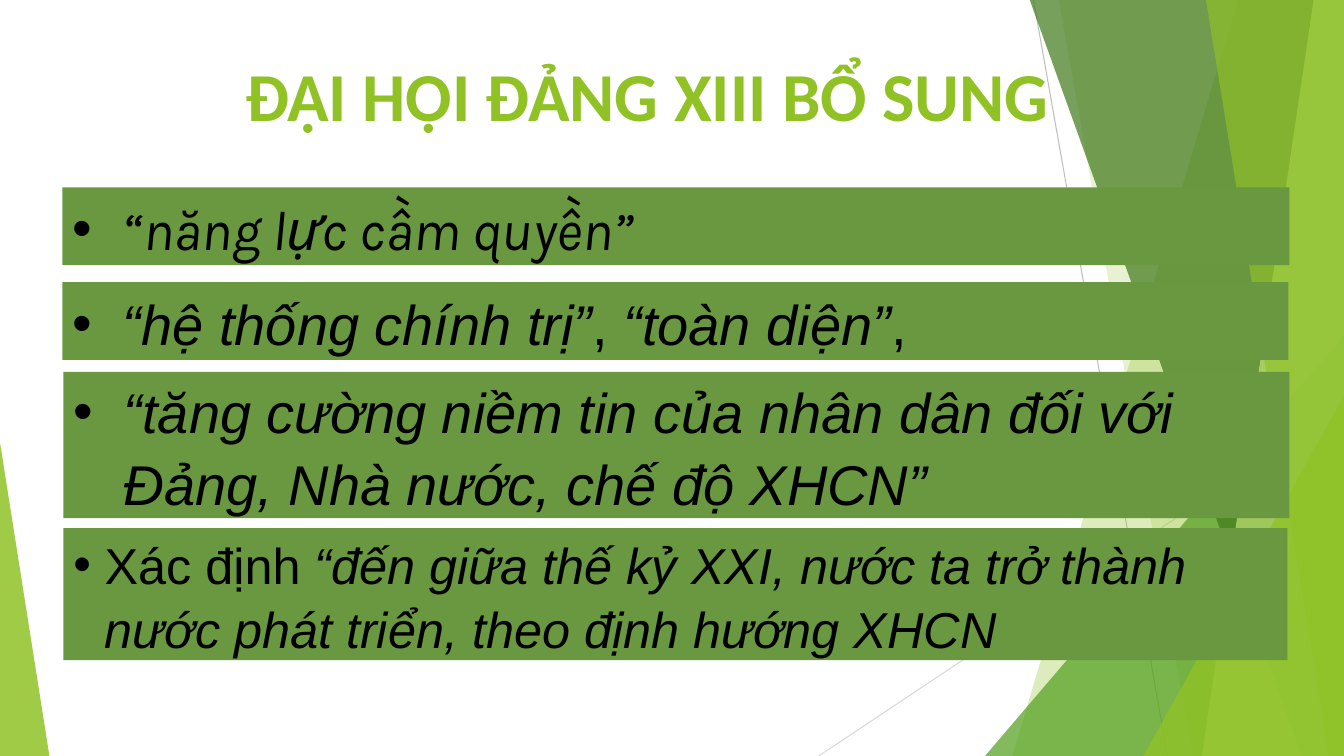
from dataclasses import dataclass

from lxml.etree import SubElement
from pptx import Presentation
from pptx.dml.color import RGBColor
from pptx.enum.shapes import MSO_CONNECTOR, MSO_SHAPE
from pptx.enum.text import MSO_ANCHOR, PP_ALIGN
from pptx.oxml.ns import qn
from pptx.util import Inches, Pt

WIDTH, HEIGHT = 13.33, 7.5


@dataclass(frozen=True)
class Theme:
    lime: str = "90C226"
    pale: str = "C0E474"
    leaf: str = "54A021"
    forest: str = "3F7819"
    bar: str = "699841"
    ink: str = "000000"
    grey: str = "BFBFBF"
    light_grey: str = "D9D9D9"
    title_size: int = 49
    large: int = 40
    medium: int = 36
    title_font: str = "Calibri"
    body_font: str = "Arial"
    quote_font: str = "Karla"


def add_text(para, text, *, size, font, color, bold=False, italic=False):
    """Append one formatted span to a paragraph."""
    span = para.add_run()
    span.text = text
    span.font.size = Pt(size)
    span.font.name = font
    span.font.bold = bold
    span.font.italic = italic
    span.font.color.rgb = RGBColor.from_string(color)


def add_bullet(para, indent):
    """Give a paragraph a round bullet with a hanging indent."""
    properties = para._p.get_or_add_pPr()
    properties.set("marL", str(Inches(indent)))
    properties.set("indent", str(-Inches(indent)))
    SubElement(properties, qn("a:buFont")).set("typeface", "Arial")
    SubElement(properties, qn("a:buChar")).set("char", "•")


class SlideBuilder:
    def __init__(self, deck, theme):
        self.theme = theme
        self.page = deck.slides.add_slide(deck.slide_layouts[6])

    def paint(self, shape, color, opacity=100):
        shape.shadow.inherit = False
        shape.line.fill.background()
        shape.fill.solid()
        shape.fill.fore_color.rgb = RGBColor.from_string(color)
        if opacity < 100:
            tint = shape.fill._xPr.find(qn("a:solidFill"))[0]
            SubElement(tint, qn("a:alpha")).set("val", str(opacity * 1000))

    def line(self, start, end, color):
        points = [Inches(value) for value in (*start, *end)]
        connector = self.page.shapes.add_connector(MSO_CONNECTOR.STRAIGHT, *points)
        connector.line.color.rgb = RGBColor.from_string(color)
        connector.line.width = Pt(0.75)
        SubElement(connector._element.spPr, qn("a:effectLst"))

    def panel(self, top_left, bottom_left, color, opacity):
        """Full-height panel with a slanted left edge."""
        corners = [(top_left, -0.01), (WIDTH, -0.01), (WIDTH, HEIGHT), (bottom_left, HEIGHT)]
        points = [(Inches(x), Inches(y)) for x, y in corners]
        builder = self.page.shapes.build_freeform(*points[0], scale=1.0)
        builder.add_line_segments(points[1:], close=True)
        self.paint(builder.convert_to_shape(), color, opacity)

    def triangle(self, left, top, width, apex, color, opacity):
        """Triangle that stands on the bottom edge of the slide."""
        shape = self.page.shapes.add_shape(
            MSO_SHAPE.ISOSCELES_TRIANGLE,
            Inches(left), Inches(top), Inches(width), Inches(HEIGHT - top))
        shape.adjustments[0] = apex
        self.paint(shape, color, opacity)

    def title(self, left, top, width, height, text):
        box = self.page.shapes.add_textbox(
            Inches(left), Inches(top), Inches(width), Inches(height))
        box.text_frame.word_wrap = True
        para = box.text_frame.paragraphs[0]
        para.alignment = PP_ALIGN.CENTER
        add_text(para, text, size=self.theme.title_size, font=self.theme.title_font,
                 color=self.theme.lime, bold=True)

    def bar(self, left, top, width, height, spans, *, size, font, indent, align):
        """Green bar with one bulleted paragraph of (text, italic) spans."""
        box = self.page.shapes.add_shape(
            MSO_SHAPE.RECTANGLE,
            Inches(left), Inches(top), Inches(width), Inches(height))
        self.paint(box, self.theme.bar)
        box.text_frame.word_wrap = True
        box.text_frame.vertical_anchor = MSO_ANCHOR.MIDDLE
        para = box.text_frame.paragraphs[0]
        para.alignment = align
        para.line_spacing = 1.06
        add_bullet(para, indent)
        for text, italic in spans:
            add_text(para, text, size=size, font=font, color=self.theme.ink, italic=italic)


def main():
    deck = Presentation()
    deck.slide_width, deck.slide_height = Inches(WIDTH), Inches(HEIGHT)
    theme = Theme()
    slide = SlideBuilder(deck, theme)

    # Background facets, back to front
    slide.line((10.25, 0), (11.58, HEIGHT), theme.grey)
    slide.line((WIDTH, 4.03), (8.12, HEIGHT), theme.light_grey)
    slide.panel(12.28, 10.04, theme.lime, 30)
    slide.panel(10.5, 11.83, theme.lime, 20)
    slide.triangle(9.77, 3.33, 3.56, 1, theme.leaf, 72)
    slide.panel(10.21, 12.91, theme.forest, 70)
    slide.panel(13.03, 11.92, theme.pale, 70)
    slide.panel(11.96, 13.18, theme.lime, 65)
    slide.triangle(11.34, 3.93, 1.99, 1, theme.lime, 80)
    slide.triangle(0, 4.39, 0.49, 0, theme.lime, 85)

    # Title
    slide.title(0.73, 0.48, 11.37, 1.26, "ĐẠI HỘI ĐẢNG XIII BỔ SUNG")

    # Bulleted bars
    slide.bar(0.62, 1.86, 12.17, 0.77, [("“năng lực cầm quyền”", True)],
              size=theme.large, font=theme.quote_font, indent=0.5, align=PP_ALIGN.JUSTIFY)
    slide.bar(0.62, 2.8, 12.16, 0.77,
              [("“hệ thống chính trị”", True), (", ", False),
               ("“toàn diện”", True), (",", False)],
              size=theme.large, font=theme.body_font, indent=0.5, align=PP_ALIGN.JUSTIFY)
    slide.bar(0.63, 3.69, 12.16, 1.45,
              [("“tăng cường niềm tin của nhân dân đối với "
                "Đảng, Nhà nước, chế độ XHCN”", True)],
              size=theme.large, font=theme.body_font, indent=0.5, align=PP_ALIGN.LEFT)
    slide.bar(0.63, 5.24, 12.14, 1.31,
              [("Xác định ", False),
               ("“đến giữa thế kỷ XXI, nước ta trở thành "
                "nước phát triển, theo định hướng XHCN", True)],
              size=theme.medium, font=theme.body_font, indent=0.31, align=PP_ALIGN.LEFT)

    deck.save("out.pptx")


if __name__ == "__main__":
    main()
